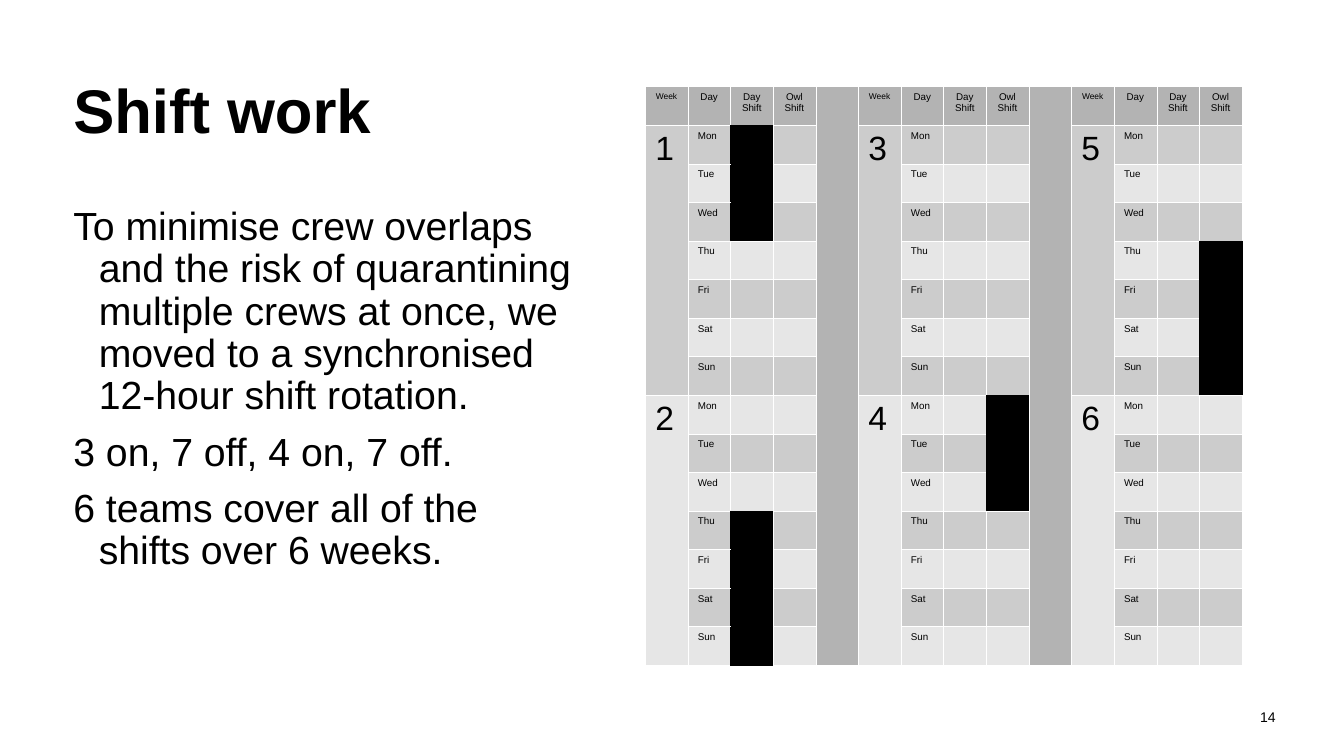
import pptx
import pptx.dml.color
import pptx.enum.text
import pptx.oxml
import pptx.oxml.ns
import pptx.util

Cm = pptx.util.Cm
Pt = pptx.util.Pt
ALIGN = pptx.enum.text.PP_ALIGN
ANCHOR = pptx.enum.text.MSO_ANCHOR

COLOURS = {
    "text": "000000",
    "worked": "000000",
    "header": "B3B3B3",
    "dark band": "CCCCCC",
    "light band": "E6E6E6",
    "grid": "FFFFFF",
}
DAYS = ["Mon", "Tue", "Wed", "Thu", "Fri", "Sat", "Sun"]
HEADINGS = [("Week", 6), ("Day", 7), ("Day Shift", 7), ("Owl Shift", 7)]
BLOCKS = 3
BLOCK_WIDTH = len(HEADINGS) + 1
ROWS = 1 + 2 * len(DAYS)
COLUMNS = BLOCKS * BLOCK_WIDTH - 1
DAY_SHIFT, OWL_SHIFT = 2, 3
# block, shift column within the block, first row, last row
WORKED = [(0, DAY_SHIFT, 1, 3), (0, DAY_SHIFT, 11, 14),
          (1, OWL_SHIFT, 8, 10), (2, OWL_SHIFT, 4, 7)]


class SlideBuilder:
    def __init__(self, deck, font):
        self.page = deck.slides.add_slide(deck.slide_layouts[6])
        self.font = font

    def style(self, para, size, bold=False, align=ALIGN.LEFT):
        para.alignment = align
        for span in para.runs:
            span.font.name = self.font
            span.font.size = Pt(size)
            span.font.bold = bold
            span.font.color.rgb = pptx.dml.color.RGBColor.from_string(COLOURS["text"])

    def text(self, left, top, width, height, lines, size, bold=False,
             align=ALIGN.LEFT, anchor=ANCHOR.TOP, spacing=1.0, hanging=0, gap=0):
        box = self.page.shapes.add_textbox(Cm(left), Cm(top), Cm(width), Cm(height))
        frame = box.text_frame
        frame.word_wrap = True
        frame.vertical_anchor = anchor
        frame.text = "\n".join(lines)
        for number, para in enumerate(frame.paragraphs):
            self.style(para, size, bold, align)
            para.line_spacing = spacing
            if number:
                para.space_before = Pt(gap)
            if hanging:
                properties = para._p.get_or_add_pPr()
                properties.set("marL", str(Cm(hanging)))
                properties.set("indent", str(-Cm(hanging)))
        return frame

    def table(self, left, top, width, height, rows, columns):
        grid = self.page.shapes.add_table(
            rows, columns, Cm(left), Cm(top), Cm(width), Cm(height)).table
        grid.first_row = False
        grid.horz_banding = False
        return grid

    def cell(self, cell, fill, border="grid"):
        """Give an empty cell its hairline borders and its fill."""
        properties = cell._tc.get_or_add_tcPr()
        for side in ("lnL", "lnR", "lnT", "lnB"):
            properties.append(pptx.oxml.parse_xml(
                f'<a:{side} {pptx.oxml.ns.nsdecls("a")} w="{Pt(0.06)}"><a:solidFill>'
                f'<a:srgbClr val="{COLOURS[border]}"/></a:solidFill></a:{side}>'))
        cell.fill.solid()
        cell.fill.fore_color.rgb = pptx.dml.color.RGBColor.from_string(COLOURS[fill])
        cell.margin_top = cell.margin_bottom = 0

    def label(self, cell, text, size, align=ALIGN.LEFT):
        cell.margin_top = cell.margin_bottom = Cm(0.13)
        cell.text_frame.text = text
        self.style(cell.text_frame.paragraphs[0], size, align=align)


def band(row):
    return "dark band" if row % 2 else "light band"


def add_rota(builder):
    grid = builder.table(16.26, 2.18, 15.04, 14.58, ROWS, COLUMNS)
    worked = {(row, block * BLOCK_WIDTH + shift)
              for block, shift, first, last in WORKED
              for row in range(first, last + 1)}

    for row in range(ROWS):
        for column in range(COLUMNS):
            place = column % BLOCK_WIDTH
            if (row, column) in worked:
                builder.cell(grid.cell(row, column), "worked", "worked")
            elif row == 0 or place == len(HEADINGS):
                builder.cell(grid.cell(row, column), "header")
            elif place == 0:
                week_start = 1 if row <= len(DAYS) else 1 + len(DAYS)
                builder.cell(grid.cell(row, column), band(week_start))
            else:
                builder.cell(grid.cell(row, column), band(row))

    for block in range(BLOCKS):
        start = block * BLOCK_WIDTH
        for offset, (heading, size) in enumerate(HEADINGS):
            builder.label(grid.cell(0, start + offset), heading, size, ALIGN.CENTER)
        for half in range(2):
            first = 1 + half * len(DAYS)
            week = grid.cell(first, start)
            week.merge(grid.cell(first + len(DAYS) - 1, start))
            builder.label(week, str(2 * block + half + 1), 24)
            for number, day in enumerate(DAYS):
                builder.label(grid.cell(first + number, start + 1), day, 7)
        if block:
            grid.cell(0, start - 1).merge(grid.cell(ROWS - 1, start - 1))

    for block, shift, first, last in WORKED:
        column = block * BLOCK_WIDTH + shift
        grid.cell(first, column).merge(grid.cell(last, column))


def main():
    deck = pptx.Presentation()
    deck.slide_width, deck.slide_height = Cm(33.87), Cm(19.05)
    builder = SlideBuilder(deck, "Arial")
    builder.text(1.6, 1.02, 30.68, 3.68, ["Shift work"], 44, bold=True,
                 anchor=ANCHOR.MIDDLE, spacing=0.9)
    builder.text(1.6, 5.08, 13.13, 11.68, [
        "To minimise crew overlaps and the risk of quarantining multiple crews "
        "at once, we moved to a synchronised 12-hour shift rotation.",
        "3 on, 7 off, 4 on, 7 off.",
        "6 teams cover all of the shifts over 6 weeks.",
    ], 28, spacing=0.9, hanging=0.64, gap=10)
    number = builder.text(31.09, 17.55, 1.19, 1.02, ["14"], 10,
                          align=ALIGN.RIGHT, anchor=ANCHOR.MIDDLE)
    number.margin_left = number.margin_top = number.margin_bottom = 0
    number.margin_right = Cm(0.13)
    add_rota(builder)
    deck.save("out.pptx")


if __name__ == "__main__":
    main()
